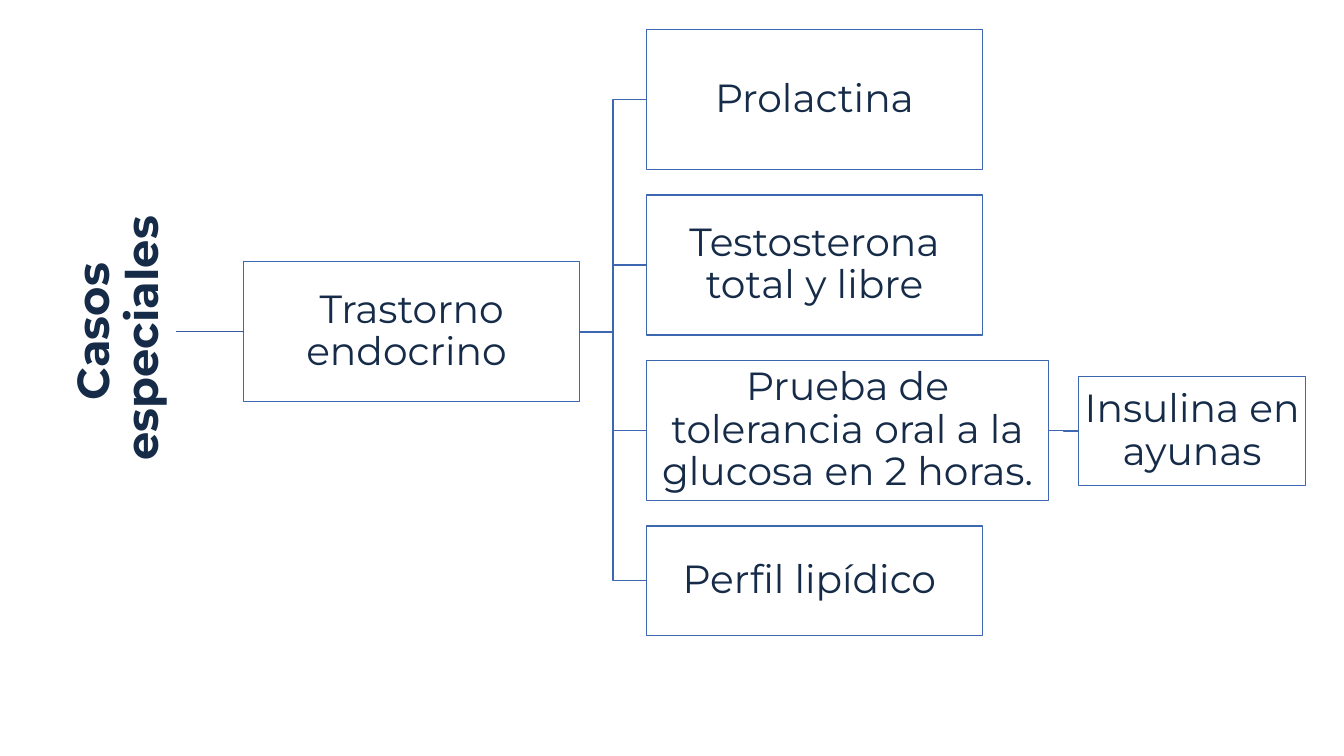
from pptx import Presentation
from pptx.dml.color import RGBColor
from pptx.enum.shapes import MSO_CONNECTOR, MSO_SHAPE
from pptx.enum.text import MSO_ANCHOR, MSO_AUTO_SIZE, PP_ALIGN
from pptx.util import Pt
from lxml.etree import SubElement
from pptx.oxml.ns import qn

NAVY = RGBColor(0x15, 0x2B, 0x48)
BLUE = RGBColor(0x3E, 0x67, 0xB2)
DARK_BLUE = RGBColor(0x36, 0x5B, 0x9D)
WHITE = RGBColor(0xFF, 0xFF, 0xFF)

TEST_LEFT = 461.75
TEST_TOP = 21
TEST_PITCH = 118.25
LEFT_SITE, RIGHT_SITE = 1, 3


def write_label(shape, label, size, bold=False):
    frame = shape.text_frame
    frame.text = label
    frame.word_wrap = True
    frame.auto_size = MSO_AUTO_SIZE.NONE
    frame.vertical_anchor = MSO_ANCHOR.MIDDLE
    frame.margin_left = frame.margin_right = Pt(1.5)
    frame.margin_top = frame.margin_bottom = Pt(1.5)
    paragraph = frame.paragraphs[0]
    paragraph.alignment = PP_ALIGN.CENTER
    paragraph.line_spacing = 0.9
    font = paragraph.runs[0].font
    font.name = "Montserrat"
    font.size = Pt(size)
    font.bold = bold
    font.color.rgb = NAVY


def style_branch(branch, color):
    branch.line.color.rgb = color
    branch.line.width = Pt(1)
    SubElement(branch._element.spPr, qn("a:effectLst"))


prs = Presentation()
prs.slide_width = Pt(960)
prs.slide_height = Pt(540)
slide = prs.slides.add_slide(prs.slide_layouts[5])

special_cases = slide.shapes.title
special_cases.left, special_cases.top = Pt(-18), Pt(196)
special_cases.width, special_cases.height = Pt(206.5), Pt(82)
special_cases.rotation = 270
write_label(special_cases, "Casos especiales ", 32, True)

nodes = [
    ("Trastorno endocrino ", 174, 187, 240, 100),
    ("Prolactina", TEST_LEFT, TEST_TOP, 240, 100),
    ("Testosterona total y libre", TEST_LEFT, TEST_TOP + TEST_PITCH, 240, 100),
    ("Prueba de tolerancia oral a la glucosa en 2 horas.",
     TEST_LEFT, TEST_TOP + 2 * TEST_PITCH, 287.25, 100),
    ("Perfil lipídico ", TEST_LEFT, TEST_TOP + 3 * TEST_PITCH, 240, 78),
    ("Insulina en ayunas", 770.5, 269, 162, 78),
]
boxes = []
for label, left, top, width, height in nodes:
    box = slide.shapes.add_shape(
        MSO_SHAPE.RECTANGLE, Pt(left), Pt(top), Pt(width), Pt(height))
    box.shadow.inherit = False
    box.fill.solid()
    box.fill.fore_color.rgb = WHITE
    box.line.color.rgb = BLUE
    box.line.width = Pt(1)
    write_label(box, label, 28)
    boxes.append(box)

disorder, prolactin, testosterone, glucose, lipids, insulin = boxes

root_branch = slide.shapes.add_connector(
    MSO_CONNECTOR.STRAIGHT, Pt(126), Pt(237), Pt(174), Pt(237))
root_branch.end_connect(disorder, LEFT_SITE)
style_branch(root_branch, DARK_BLUE)

for parent, child in [(disorder, prolactin), (disorder, testosterone),
                      (disorder, glucose), (disorder, lipids),
                      (glucose, insulin)]:
    branch = slide.shapes.add_connector(
        MSO_CONNECTOR.ELBOW, parent.left + parent.width,
        parent.top + parent.height // 2,
        child.left, child.top + child.height // 2)
    branch.begin_connect(parent, RIGHT_SITE)
    branch.end_connect(child, LEFT_SITE)
    style_branch(branch, BLUE)

prs.save("out.pptx")
